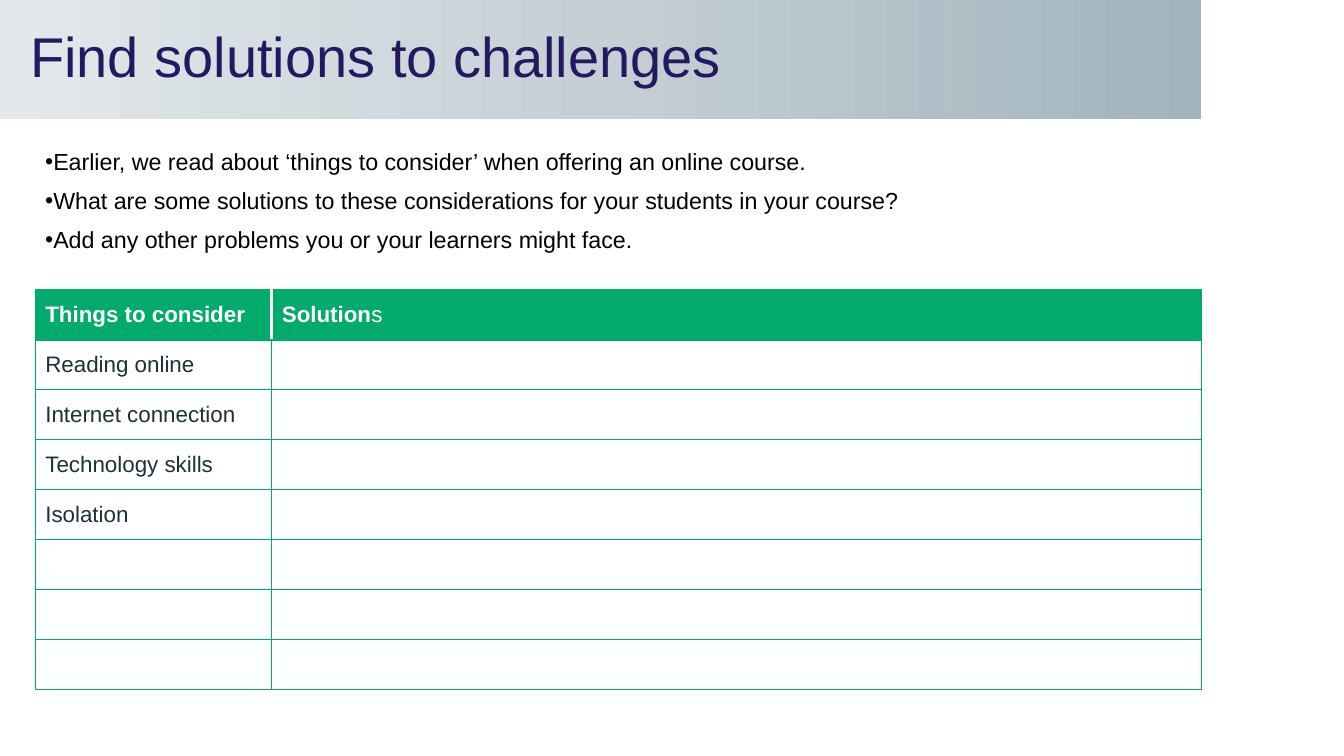
from lxml import etree
from pptx import Presentation
from pptx.dml.color import RGBColor
from pptx.enum.text import MSO_ANCHOR, MSO_AUTO_SIZE, PP_ALIGN
from pptx.oxml.ns import qn
from pptx.util import Pt

LEFT = PP_ALIGN.LEFT
MIDDLE = MSO_ANCHOR.MIDDLE
NO_FIT = MSO_AUTO_SIZE.NONE
TITLE_ONLY = 5

FONT = "Arial"
GREEN = "02AA6D"
WHITE = "FFFFFF"
BLACK = "000000"
NAVY = "251863"
SLATE = "1D3138"
BANNER_STOPS = [(0, "A0B4BD"), (50, "C5D0D5"), (100, "E3E8EA")]

PROMPTS = [
    "Earlier, we read about ‘things to consider’ when offering an online course.",
    "What are some solutions to these considerations for your students in your course?",
    "Add any other problems you or your learners might face.",
]
HEADINGS = [[("Things to consider", True)], [("Solution", True), ("s", False)]]
CONSIDERATIONS = ["Reading online", "Internet connection", "Technology skills", "Isolation", "", "", ""]


def rgb(value):
    return RGBColor.from_string(value)


def add_color(parent, value):
    etree.SubElement(parent, qn("a:srgbClr"), val=value)


class SlideBuilder:
    def __init__(self, slide):
        self.slide = slide

    def style(self, font, size, color, bold=False):
        font.name = FONT
        font.size = Pt(size)
        font.bold = bold
        font.color.rgb = rgb(color)

    def title(self, text, left, top, width, height):
        banner = self.slide.shapes.title
        banner.left, banner.top = Pt(left), Pt(top)
        banner.width, banner.height = Pt(width), Pt(height)
        banner.fill.gradient()
        gradient = banner._element.spPr.find(qn("a:gradFill"))
        stops = gradient.find(qn("a:gsLst"))
        for stop in list(stops):
            stops.remove(stop)
        for position, color in BANNER_STOPS:
            add_color(etree.SubElement(stops, qn("a:gs"), pos=str(position * 1000)), color)
        banner.fill.gradient_angle = 180
        frame = banner.text_frame
        frame.text = text
        frame.word_wrap = True
        frame.auto_size = NO_FIT
        frame.vertical_anchor = MIDDLE
        heading = frame.paragraphs[0]
        heading.alignment = LEFT
        heading.line_spacing = 0.9
        heading._p.get_or_add_pPr().set("marL", str(Pt(14.4)))
        self.style(heading.runs[0].font, 40, NAVY)

    def bullets(self, lines, left, top, width, height):
        box = self.slide.shapes.add_textbox(Pt(left), Pt(top), Pt(width), Pt(height))
        frame = box.text_frame
        frame.word_wrap = True
        frame.text = "\n".join(lines)
        for index, paragraph in enumerate(frame.paragraphs):
            paragraph.line_spacing = 0.9
            paragraph.space_before = Pt(10 if index else 0)
            properties = paragraph._p.get_or_add_pPr()
            properties.set("marL", "0")
            properties.set("indent", str(Pt(-20)))
            etree.SubElement(properties, qn("a:buFont"), typeface=FONT)
            etree.SubElement(properties, qn("a:buChar"), char="•")
            self.style(paragraph.runs[0].font, 16.6, BLACK)

    def borders(self, cell, **sides):
        properties = cell._tc.get_or_add_tcPr()
        for side in "LRTB":
            color, weight = sides.get(side, (GREEN, 1))
            line = etree.SubElement(properties, qn("a:ln" + side), w=str(Pt(weight)))
            add_color(etree.SubElement(line, qn("a:solidFill")), color)

    def cell(self, cell, parts, color):
        cell.vertical_anchor = MIDDLE
        paragraph = cell.text_frame.paragraphs[0]
        for text, bold in parts:
            run = paragraph.add_run()
            run.text = text
            self.style(run.font, 16, color, bold)

    def table(self, headings, labels, left, top, widths, row_height):
        row_count = len(labels) + 1
        frame = self.slide.shapes.add_table(
            row_count, len(widths), Pt(left), Pt(top), Pt(sum(widths)), Pt(row_height * row_count))
        table = frame.table
        table.horz_banding = False
        for column, width in zip(table.columns, widths):
            column.width = Pt(width)
        for row in table.rows:
            row.height = Pt(row_height)
        divider, rule = (WHITE, 2.25), (GREEN, 2)
        for column, (parts, inner) in enumerate(zip(headings, "RL")):
            header = table.cell(0, column)
            self.borders(header, **{inner: divider, "B": rule})
            header.fill.solid()
            header.fill.fore_color.rgb = rgb(GREEN)
            self.cell(header, parts, WHITE)
        for row, label in enumerate(labels, 1):
            for column in range(len(widths)):
                entry = table.cell(row, column)
                self.borders(entry, T=rule if row == 1 else (GREEN, 1))
                entry.fill.background()
            if label:
                self.cell(table.cell(row, 0), [(label, False)], SLATE)


def main():
    deck = Presentation()
    deck.slide_width, deck.slide_height = Pt(960), Pt(540)
    builder = SlideBuilder(deck.slides.add_slide(deck.slide_layouts[TITLE_ONLY]))
    builder.title("Find solutions to challenges", 0, 0, 858.2, 85)
    builder.bullets(PROMPTS, 25.2, 103.7, 833, 85)
    builder.table(HEADINGS, CONSIDERATIONS, 25.2, 207, [169, 664], 35.72)
    deck.save("out.pptx")


if __name__ == "__main__":
    main()
